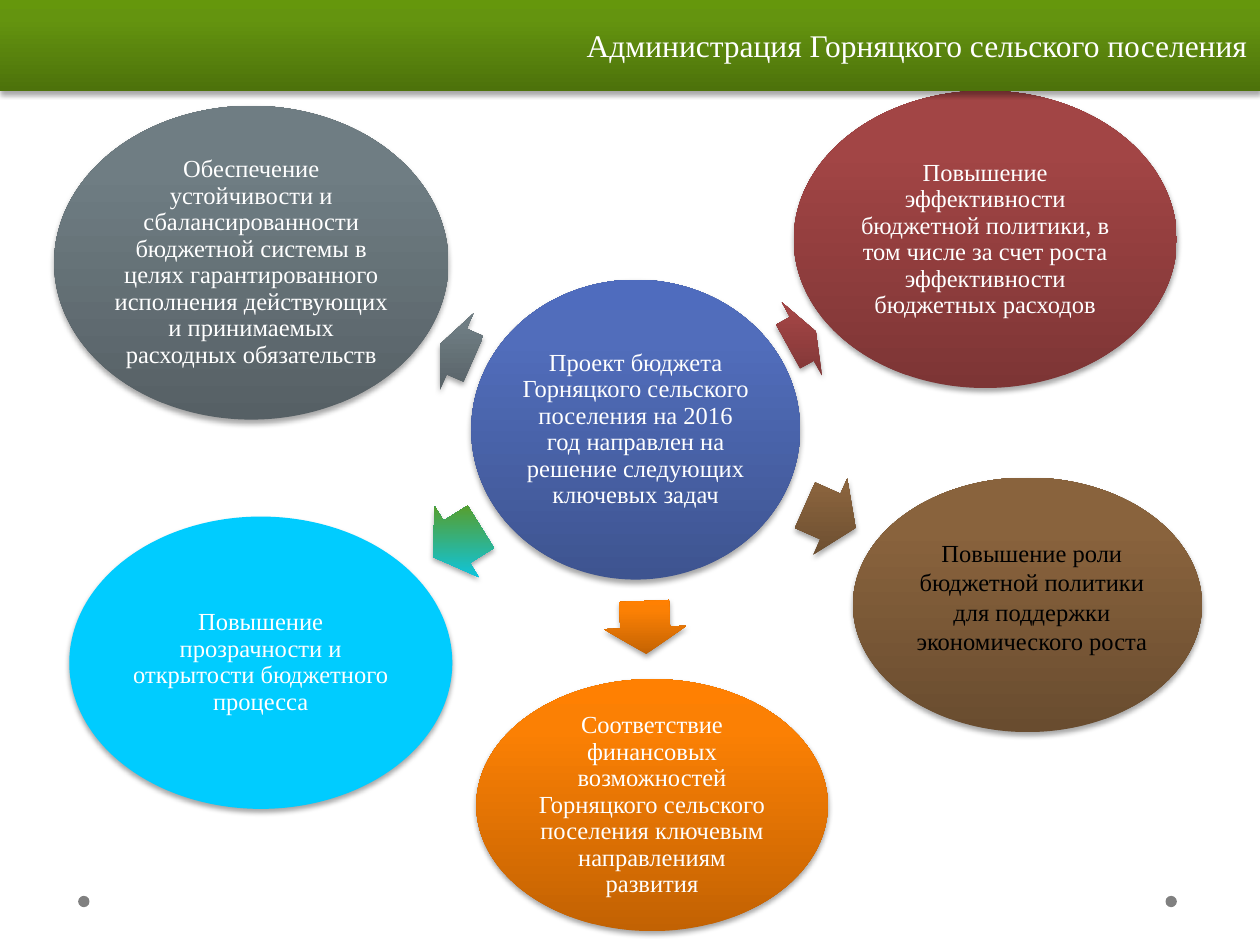
"""Build the slide of key tasks addressed by the settlement's draft budget."""
from dataclasses import dataclass

from lxml import etree
from pptx import Presentation
from pptx.dml.color import RGBColor
from pptx.enum.shapes import MSO_SHAPE
from pptx.enum.text import MSO_ANCHOR, PP_ALIGN
from pptx.oxml import parse_xml
from pptx.oxml.ns import nsdecls, qn
from pptx.util import Inches, Pt

ELLIPSE, ARROW, RECTANGLE = MSO_SHAPE.OVAL, MSO_SHAPE.RIGHT_ARROW, MSO_SHAPE.RECTANGLE
CENTER, RIGHT = PP_ALIGN.CENTER, PP_ALIGN.RIGHT
TOP, MIDDLE = MSO_ANCHOR.TOP, MSO_ANCHOR.MIDDLE


@dataclass(frozen=True)
class Theme:
    font: str = "Times New Roman"
    title_size: int = 18
    body_size: int = 14
    white: str = "FFFFFF"
    black: str = "000000"
    dot: str = "808080"
    blue: tuple = ((0, "3E5490"), (80, "516DBB"), (100, "4F6CBE"))
    red: tuple = ((0, "7D3535"), (80, "A24545"), (100, "A44343"))
    orange: tuple = ((0, "C26203"), (80, "FB8004"), (100, "FF8002"))
    brown: tuple = ((0, "694C2F"), (80, "89633D"), (100, "8B633C"))
    gray: tuple = ((0, "566065"), (80, "6F7D83"), (100, "6F7E84"))
    green: tuple = ((0, "4D720B"), (80, "64940F"), (100, "65970C"))
    cyan: str = "00CCFF"
    cyan_green: tuple = ((0, "00CCFF"), (100, "65970C"))


THEME = Theme()


def add_painted_shape(preset, box, paint, rotation=0, shadow=True):
    shape = slide.shapes.add_shape(preset, *map(Inches, box))
    shape.rotation = rotation
    shape.shadow.inherit = False
    shape.line.fill.background()
    properties = shape._element.spPr
    if isinstance(paint, str):
        shape.fill.solid()
        shape.fill.fore_color.rgb = RGBColor.from_string(paint)
    else:
        stops = "".join(
            f'<a:gs pos="{position * 1000}"><a:srgbClr val="{color}"/></a:gs>'
            for position, color in paint
        )
        gradient = parse_xml(
            f'<a:gradFill {nsdecls("a")} rotWithShape="0"><a:gsLst>{stops}</a:gsLst>'
            '<a:lin ang="16200000" scaled="0"/></a:gradFill>'
        )
        properties.find(qn("a:prstGeom")).addnext(gradient)
    if shadow:
        outer = etree.SubElement(
            properties.find(qn("a:effectLst")), qn("a:outerShdw"),
            blurRad=str(Pt(3.1)), dist=str(Pt(1.8)), dir="5400000", rotWithShape="0",
        )
        color = etree.SubElement(outer, qn("a:srgbClr"), val=THEME.black)
        etree.SubElement(color, qn("a:alpha"), val="35000")
    return shape


def write_text(shape, text, size=THEME.body_size, color=THEME.white, align=CENTER,
               anchor=MIDDLE, line_spacing=None, inset=None):
    frame = shape.text_frame
    frame.word_wrap = True
    frame.vertical_anchor = anchor
    if inset is not None:
        frame.margin_left = frame.margin_right = Inches(inset)
        frame.margin_top = frame.margin_bottom = Inches(inset)
    paragraph = frame.paragraphs[0]
    paragraph.alignment = align
    paragraph.line_spacing = line_spacing
    run = paragraph.add_run()
    run.text = text
    run.font.name = THEME.font
    run.font.size = Pt(size)
    run.font.color.rgb = RGBColor.from_string(color)


presentation = Presentation()
presentation.slide_width = Inches(10)
presentation.slide_height = Inches(7.5)
slide = presentation.slides.add_slide(presentation.slide_layouts[6])

for left in (9.25, 0.62):
    add_painted_shape(ELLIPSE, (left, 7.11, 0.09, 0.09), THEME.dot, shadow=False)

center = add_painted_shape(ELLIPSE, (3.74, 2.22, 2.61, 2.38), THEME.blue)
write_text(
    center,
    "Проект бюджета Горняцкого сельского поселения на 2016 год направлен на "
    "решение следующих ключевых задач",
    line_spacing=0.9, inset=0.02,
)

tasks = [
    ((6.3, 0.72, 3.04, 2.36), THEME.red, (6.24, 2.36, 0.25, 0.66), 331.3, THEME.red,
     "Повышение эффективности бюджетной политики, в том числе за счет роста "
     "эффективности бюджетных расходов"),
    ((3.78, 5.39, 2.79, 2), THEME.orange, (4.91, 4.65, 0.42, 0.66), 87.6, THEME.orange,
     "Соответствие финансовых возможностей Горняцкого сельского поселения "
     "ключевым направлениям развития"),
    ((6.77, 3.79, 2.77, 2.02), THEME.brown, (6.37, 3.77, 0.44, 0.66), 24, THEME.brown,
     None),
    ((0.55, 4.1, 3.04, 2.32), THEME.cyan, (3.4, 3.97, 0.45, 0.66), 148.1,
     THEME.cyan_green,
     "Повышение прозрачности и открытости бюджетного процесса"),
    ((0.43, 0.84, 3.13, 2.49), THEME.gray, (3.48, 2.46, 0.29, 0.66), 203.6, THEME.gray,
     "Обеспечение устойчивости и сбалансированности бюджетной системы в целях "
     "гарантированного исполнения действующих и принимаемых расходных обязательств"),
]
for task_box, task_paint, arrow_box, rotation, arrow_paint, text in tasks:
    arrow = add_painted_shape(ARROW, arrow_box, arrow_paint, rotation)
    arrow.adjustments[0] = 0.6
    arrow.adjustments[1] = 0.5
    task = add_painted_shape(ELLIPSE, task_box, task_paint)
    if text:
        write_text(task, text, line_spacing=0.9, inset=0.02)

growth_label = slide.shapes.add_textbox(*map(Inches, (7.05, 4.22, 2.28, 1.04)))
write_text(
    growth_label,
    "Повышение роли бюджетной политики для поддержки экономического роста",
    color=THEME.black, anchor=TOP,
)

header = add_painted_shape(RECTANGLE, (0, 0, 10, 0.72), THEME.green)
write_text(header, "Администрация Горняцкого сельского поселения",
           size=THEME.title_size, align=RIGHT)

presentation.save("out.pptx")
